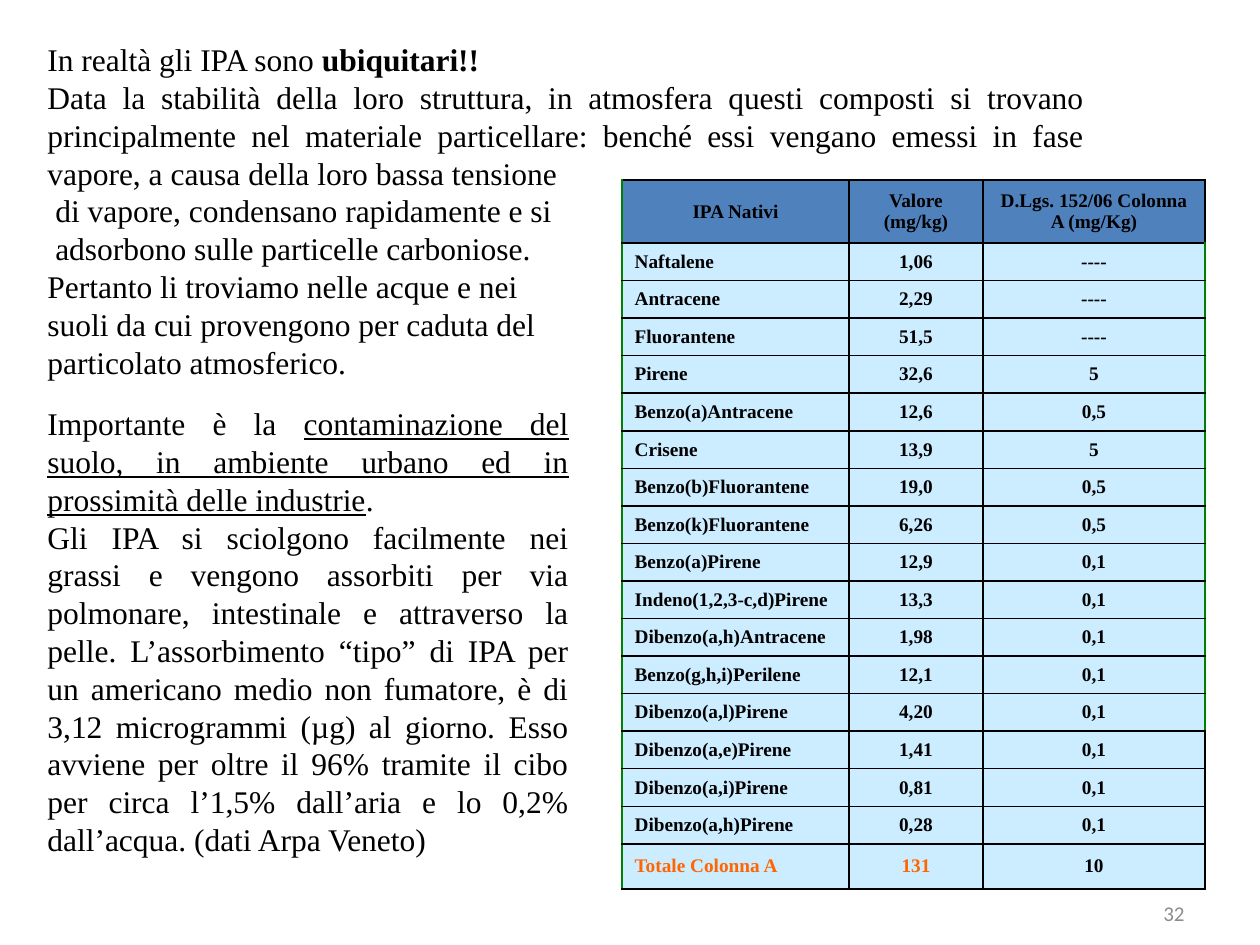
from pptx import Presentation
from pptx.dml.color import RGBColor
from pptx.enum.text import MSO_ANCHOR, PP_ALIGN
from pptx.oxml.ns import qn
from pptx.util import Pt
from lxml import etree

BLACK = RGBColor(0x00, 0x00, 0x00)
GREEN = RGBColor(0x00, 0x80, 0x00)
BLUE = RGBColor(0x4F, 0x81, 0xBD)
PALE = RGBColor(0xCC, 0xEC, 0xFF)
ORANGE = RGBColor(0xFF, 0x66, 0x00)
GRAY = RGBColor(0x8C, 0x8C, 0x8C)

LEFT, CENTER, RIGHT, JUSTIFY = PP_ALIGN.LEFT, PP_ALIGN.CENTER, PP_ALIGN.RIGHT, PP_ALIGN.JUSTIFY
TOP, MIDDLE = MSO_ANCHOR.TOP, MSO_ANCHOR.MIDDLE

INTRO = [
    [("In realtà gli IPA sono ", ""), ("ubiquitari!!", "b")],
    [("Data la stabilità della loro struttura, in atmosfera questi composti si trovano "
      "principalmente nel materiale particellare: benché essi vengano emessi in fase "
      "vapore, a causa della loro bassa tensione", "")],
    [(" di vapore, condensano rapidamente e si", "")],
    [(" adsorbono sulle particelle carboniose.", "")],
    [("Pertanto li troviamo nelle acque e nei", "")],
    [("suoli da cui provengono per caduta del", "")],
    [("particolato atmosferico.", "")],
]
SOIL = [
    [("Importante è la ", ""),
     ("contaminazione del suolo, in ambiente urbano ed in prossimità delle industrie", "u"),
     (".", "")],
    [("Gli IPA si sciolgono facilmente nei grassi e vengono assorbiti per via polmonare, "
      "intestinale e attraverso la pelle. L’assorbimento “tipo” di IPA per un americano "
      "medio non fumatore, è di 3,12 microgrammi (µg) al giorno. Esso avviene per oltre "
      "il 96% tramite il cibo per circa l’1,5% dall’aria e lo 0,2% dall’acqua. "
      "(dati Arpa Veneto)", "")],
]
HEADER = ("IPA Nativi", "Valore\n(mg/kg)", "D.Lgs. 152/06 Colonna A (mg/Kg)")
COMPOUNDS = [
    ("Naftalene", "1,06", "----"),
    ("Antracene", "2,29", "----"),
    ("Fluorantene", "51,5", "----"),
    ("Pirene", "32,6", "5"),
    ("Benzo(a)Antracene", "12,6", "0,5"),
    ("Crisene", "13,9", "5"),
    ("Benzo(b)Fluorantene", "19,0", "0,5"),
    ("Benzo(k)Fluorantene", "6,26", "0,5"),
    ("Benzo(a)Pirene", "12,9", "0,1"),
    ("Indeno(1,2,3-c,d)Pirene", "13,3", "0,1"),
    ("Dibenzo(a,h)Antracene", "1,98", "0,1"),
    ("Benzo(g,h,i)Perilene", "12,1", "0,1"),
    ("Dibenzo(a,l)Pirene", "4,20", "0,1"),
    ("Dibenzo(a,e)Pirene", "1,41", "0,1"),
    ("Dibenzo(a,i)Pirene", "0,81", "0,1"),
    ("Dibenzo(a,h)Pirene", "0,28", "0,1"),
]
TOTAL = ("Totale Colonna A", "131", "10")
GREEN_RIGHT_ROWS = range(1, 14)


class Deck:
    font = "Times New Roman"
    scale = 914400 / 126

    def __init__(self, width, height):
        self.prs = Presentation()
        self.prs.slide_width, self.prs.slide_height = self.emu(width, height)
        self.s = self.prs.slides.add_slide(self.prs.slide_layouts[6])

    def emu(self, *lengths):
        return [round(n * self.scale) for n in lengths]

    def paragraphs(self, tf, content, size, color, align, font=None):
        for i, runs in enumerate(content):
            p = tf.paragraphs[0] if i == 0 else tf.add_paragraph()
            p.alignment = align
            for text, style in runs:
                r = p.add_run()
                r.text = text
                r.font.name = font or self.font
                r.font.size = Pt(size)
                r.font.bold = "b" in style
                r.font.underline = "u" in style
                r.font.color.rgb = color

    def text(self, box, content, size=18, color=BLACK, align=JUSTIFY, font=None, anchor=TOP):
        tf = self.s.shapes.add_textbox(*self.emu(*box)).text_frame
        tf.word_wrap = True
        tf.vertical_anchor = anchor
        self.paragraphs(tf, content, size, color, align, font)

    def border(self, cell, side, color):
        ln = etree.SubElement(cell._tc.get_or_add_tcPr(), qn(f"a:ln{side}"), w=str(Pt(1)))
        fill = etree.SubElement(ln, qn("a:solidFill"))
        etree.SubElement(fill, qn("a:srgbClr"), val=str(color))

    def cell(self, cell, text, fill, color, align, left, right):
        for side, line in zip("LRTB", (left, right, BLACK, BLACK)):
            self.border(cell, side, line)
        cell.fill.solid()
        cell.fill.fore_color.rgb = fill
        cell.vertical_anchor = MIDDLE
        content = [[(line, "b")] for line in text.split("\n")]
        self.paragraphs(cell.text_frame, content, 11, color, align)

    def table(self, x, y, widths, heights, rows):
        box = self.emu(x, y, sum(widths), sum(heights))
        table = self.s.shapes.add_table(len(rows), len(widths), *box).table
        for column, width in zip(table.columns, self.emu(*widths)):
            column.width = width
        for row, height in zip(table.rows, self.emu(*heights)):
            row.height = height
        last = len(rows) - 1
        for i, row in enumerate(rows):
            for j, text in enumerate(row):
                self.cell(
                    table.cell(i, j), text,
                    fill=BLUE if i == 0 else PALE,
                    color=ORANGE if i == last and j < 2 else BLACK,
                    align=LEFT if i and j == 0 else CENTER,
                    left=GREEN if j == 0 else BLACK,
                    right=GREEN if j == 2 and i in GREEN_RIGHT_ROWS else BLACK,
                )


def main():
    deck = Deck(1260, 945)
    deck.text((35, 34, 1062, 357), INTRO)
    deck.text((35, 398, 546, 471), SOIL)
    body = 601 / len(COMPOUNDS)
    heights = [63] + [body] * len(COMPOUNDS) + [45]
    deck.table(622, 180, (227, 134, 222), heights, [HEADER, *COMPOUNDS, TOTAL])
    deck.text((903, 888, 294, 50), [[("32", "")]], 12, GRAY, RIGHT, "Calibri", MIDDLE)
    deck.prs.save("out.pptx")


if __name__ == "__main__":
    main()
